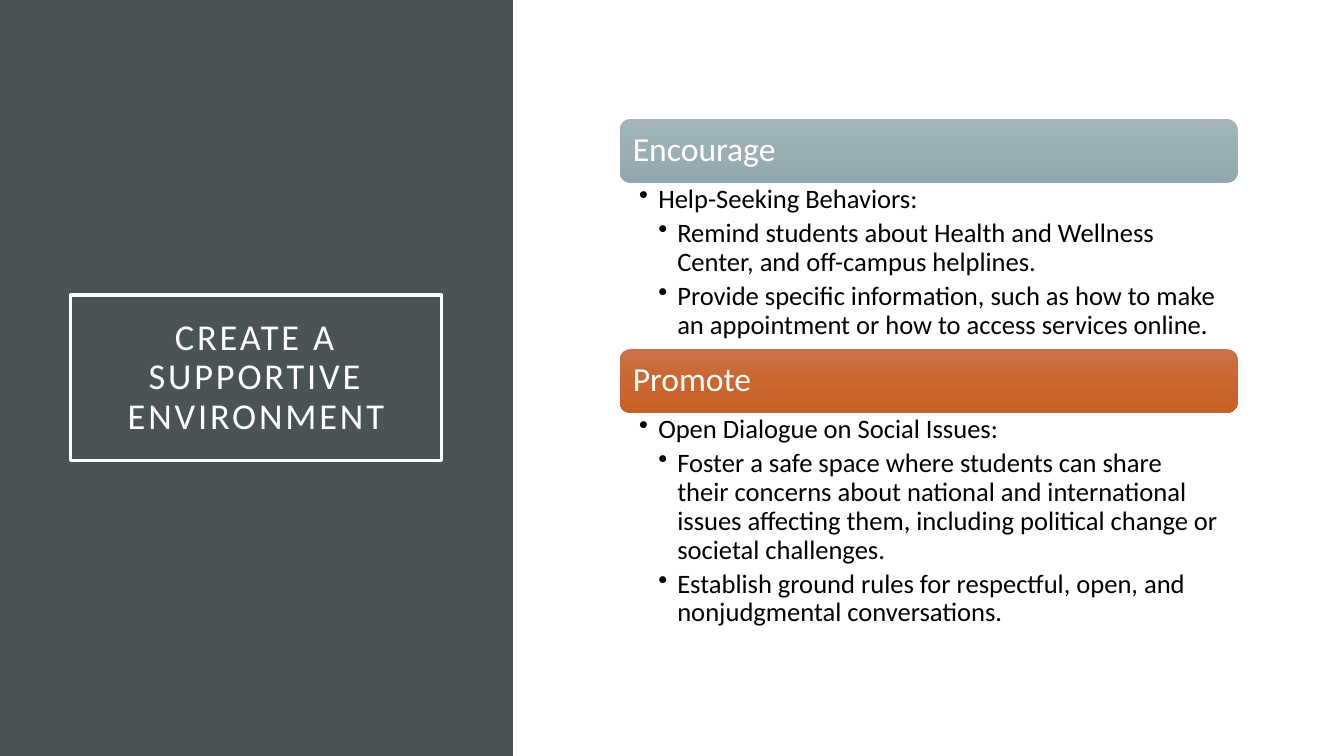
"""Build the slide on creating a supportive environment."""
from copy import deepcopy

from lxml import etree
from pptx import Presentation
from pptx import util as u
from pptx.dml.color import RGBColor
from pptx.enum import shapes, text
from pptx.oxml.ns import qn

WHITE = RGBColor(0xFF, 0xFF, 0xFF)
BLACK = RGBColor(0, 0, 0)
SLATE = RGBColor(0x4A, 0x53, 0x56)
GREYS = [RGBColor(0xA3, 0xB5, 0xBB), RGBColor(0x9B, 0xAF, 0xB5), RGBColor(0x93, 0xA9, 0xAF)]
ORANGES = [RGBColor(0xCC, 0x73, 0x4B), RGBColor(0xCB, 0x66, 0x2F), RGBColor(0xC8, 0x61, 0x28)]

TITLE = "CREATE A SUPPORTIVE ENVIRONMENT"
SECTIONS = [
    ("Encourage", GREYS, 4.2, [
        (1, "Help-Seeking Behaviors:"),
        (2, "Remind students about Health and Wellness Center, and off-campus helplines."),
        (2, "Provide specific information, such as how to make an appointment "
            "or how to access services online."),
    ]),
    ("Promote", ORANGES, 5.66, [
        (1, "Open Dialogue on Social Issues:"),
        (2, "Foster a safe space where students can share their concerns about national "
            "and international issues affecting them, including political change "
            "or societal challenges."),
        (2, "Establish ground rules for respectful, open, and nonjudgmental conversations."),
    ]),
]

SLIDE_SIZE = (33.87, 19.05)
SIDEBAR_WIDTH = 12.93
TITLE_PLACE = (1.78, 7.44, 9.35, 4.17)
LIST_LEFT, LIST_TOP, LIST_WIDTH = 15.62, 3.0, 15.57
HEADER_HEIGHT = 1.6
INDENT = 0.48

TITLE_FONT = {"name": "Calibri", "size": u.Pt(26)}
HEADER_FONT = {"name": "Calibri", "size": u.Pt(24)}
BODY_FONT = {"name": "Calibri", "size": u.Pt(19)}


def add_box(page, kind, place):
    box = page.shapes.add_shape(kind, *map(u.Cm, place))
    box.shadow.inherit = False
    box.fill.background()
    box.line.fill.background()
    return box


def set_frame(box, anchor, side, edge):
    frame = box.text_frame
    values = {"word_wrap": True, "vertical_anchor": anchor,
              "margin_left": u.Cm(side), "margin_right": u.Cm(side),
              "margin_top": u.Cm(edge), "margin_bottom": u.Cm(edge)}
    for name, value in values.items():
        setattr(frame, name, value)
    return frame


def write(para, words, font, color, align=text.PP_ALIGN.LEFT):
    para.alignment = align
    para.line_spacing = 0.9
    span = para.add_run()
    span.text = words
    for name, value in font.items():
        setattr(span.font, name, value)
    span.font.color.rgb = color
    return span


def fill_gradient(box, colors):
    box.fill.gradient()
    box.fill.gradient_angle = 270
    stop_list = box._element.spPr.find(qn("a:gradFill")).find(qn("a:gsLst"))
    stop_list.insert(1, deepcopy(stop_list[0]))
    for index, (stop, color) in enumerate(zip(box.fill.gradient_stops, colors)):
        stop.position = index / (len(colors) - 1)
        stop.color.rgb = color


def add_bullet(para, level):
    para.level = level
    para.space_after = u.Pt(3.8)
    props = para._p.get_or_add_pPr()
    props.set("marL", str(u.Cm(INDENT * level)))
    props.set("indent", str(-u.Cm(INDENT)))
    etree.SubElement(props, qn("a:buChar")).set("char", "•")


def add_title(page):
    box = add_box(page, shapes.MSO_SHAPE.RECTANGLE, TITLE_PLACE)
    box.line.color.rgb = WHITE
    box.line.width = u.Pt(2.5)
    frame = set_frame(box, text.MSO_ANCHOR.MIDDLE, 0.51, 0.51)
    span = write(frame.paragraphs[0], TITLE, TITLE_FONT, WHITE, text.PP_ALIGN.CENTER)
    span.font._element.set("spc", "200")


def add_section(page, top, heading, colors, height, items):
    header = add_box(page, shapes.MSO_SHAPE.ROUNDED_RECTANGLE,
                     (LIST_LEFT, top, LIST_WIDTH, HEADER_HEIGHT))
    fill_gradient(header, colors)
    frame = set_frame(header, text.MSO_ANCHOR.MIDDLE, 0.25, 0.25)
    write(frame.paragraphs[0], heading, HEADER_FONT, WHITE)

    place = (LIST_LEFT, top + HEADER_HEIGHT, LIST_WIDTH, height)
    body = page.shapes.add_textbox(*map(u.Cm, place))
    frame = set_frame(body, text.MSO_ANCHOR.TOP, 0.49, 0.08)
    for index, (level, words) in enumerate(items):
        para = frame.add_paragraph() if index else frame.paragraphs[0]
        write(para, words, BODY_FONT, BLACK)
        add_bullet(para, level)


def main():
    deck = Presentation()
    deck.slide_width, deck.slide_height = map(u.Cm, SLIDE_SIZE)
    page = deck.slides.add_slide(deck.slide_layouts[6])

    sidebar = add_box(page, shapes.MSO_SHAPE.RECTANGLE, (0, 0, SIDEBAR_WIDTH, SLIDE_SIZE[1]))
    sidebar.fill.solid()
    sidebar.fill.fore_color.rgb = SLATE
    add_title(page)

    top = LIST_TOP
    for heading, colors, height, items in SECTIONS:
        add_section(page, top, heading, colors, height, items)
        top += HEADER_HEIGHT + height
    deck.save("out.pptx")


if __name__ == "__main__":
    main()
